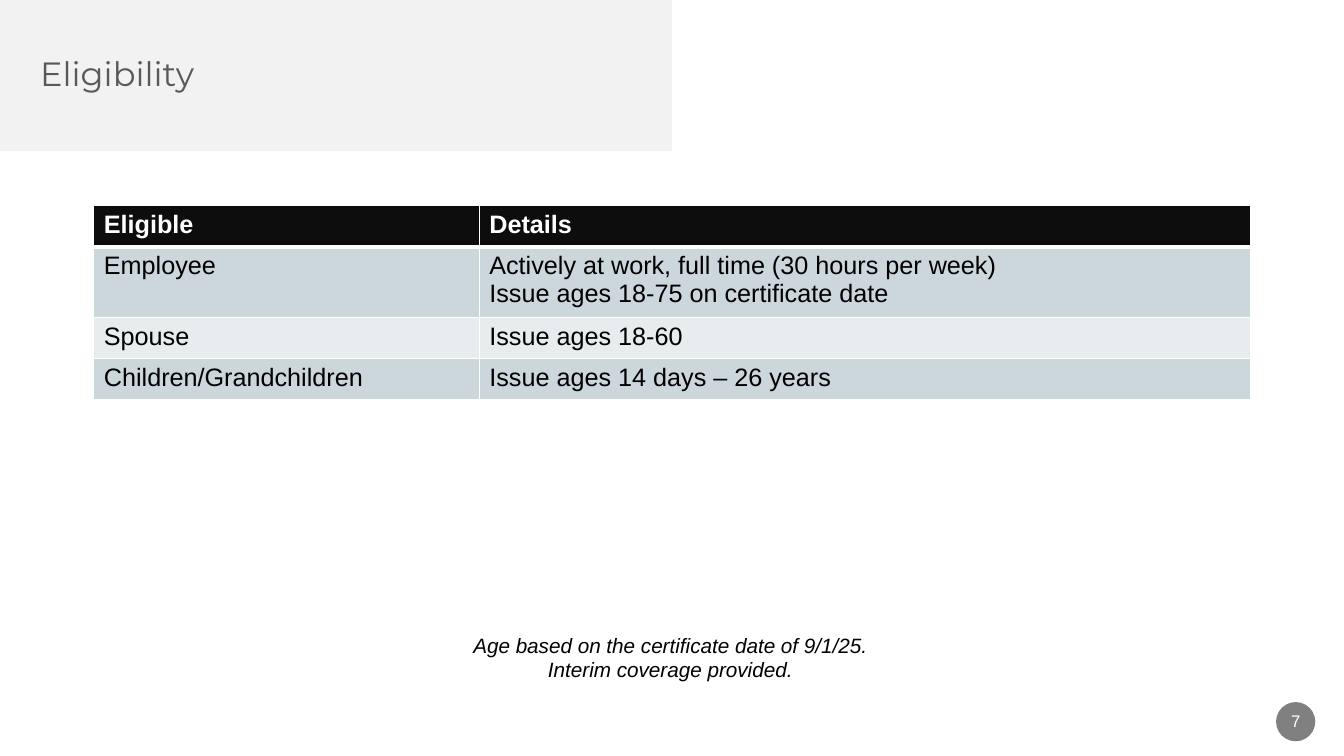
from lxml.etree import SubElement
from pptx import Presentation
from pptx.dml.color import RGBColor
from pptx.enum.shapes import MSO_SHAPE as Preset
from pptx.enum.text import MSO_ANCHOR as Anchor, PP_ALIGN as Align
from pptx.oxml.ns import qn
from pptx.util import Pt

COLORS = {
    "white": "FFFFFF", "black": "000000", "band": "F2F2F2", "title": "595959",
    "badge": "808080", "header": "0D0D0D", "odd": "CCD7DC", "even": "E7ECEE",
}
ELIGIBILITY = [
    ("Eligible", "Details"),
    ("Employee", "Actively at work, full time (30 hours per week)\n"
                 "Issue ages 18-75 on certificate date"),
    ("Spouse", "Issue ages 18-60"),
    ("Children/Grandchildren", "Issue ages 14 days – 26 years"),
]
COLUMN_SHARES = (1 / 3, 2 / 3)
ROW_HEIGHTS = (29.3, 48, 29.3, 29.3)


def color(name):
    return RGBColor.from_string(COLORS[name])


def write(frame, text, size=18, font="Arial", ink="black", bold=False,
          italic=False, align=Align.LEFT, spacing=1.0):
    frame.word_wrap = True
    frame.text = text
    for paragraph in frame.paragraphs:
        paragraph.alignment = align
        paragraph.line_spacing = spacing
        paragraph.font.size = Pt(size)
        paragraph.font.name = font
        paragraph.font.bold = bold
        paragraph.font.italic = italic
        paragraph.font.color.rgb = color(ink)


def add_text(slide, box, text, **style):
    frame = slide.shapes.add_textbox(*map(Pt, box)).text_frame
    frame.vertical_anchor = Anchor.MIDDLE
    write(frame, text, **style)


def add_block(slide, preset, box, fill):
    shape = slide.shapes.add_shape(preset, *map(Pt, box))
    shape.shadow.inherit = False
    shape.fill.solid()
    shape.fill.fore_color.rgb = color(fill)
    shape.line.fill.background()
    return shape


def add_title_band(slide, box, title):
    left, top, width, height = box
    add_block(slide, Preset.RECTANGLE, box, "band")
    add_text(slide, (left + 21.6, top + 7.2, width - 48, height - 14.4), title,
             size=24, font="Montserrat", ink="title", spacing=0.9)


def add_borders(cell, widths):
    """Draw white cell edges; widths maps L, R, T and B to points."""
    properties = cell._tc.get_or_add_tcPr()
    for side, width in widths.items():
        line = SubElement(properties, qn(f"a:ln{side}"), w=str(Pt(width)))
        fill = SubElement(line, qn("a:solidFill"))
        SubElement(fill, qn("a:srgbClr"), val=COLORS["white"])


def add_eligibility_table(slide, box):
    frame = slide.shapes.add_table(len(ELIGIBILITY), len(COLUMN_SHARES), *map(Pt, box))
    table = frame.table
    for column, share in zip(table.columns, COLUMN_SHARES):
        column.width = Pt(box[2] * share)
    for index, (row, height, texts) in enumerate(zip(table.rows, ROW_HEIGHTS, ELIGIBILITY)):
        row.height = Pt(height)
        header = index == 0
        fill = "header" if header else "odd" if index % 2 else "even"
        edges = {"L": 1, "R": 1, "T": 3 if index == 1 else 1, "B": 3 if header else 1}
        for cell, text in zip(row.cells, texts):
            add_borders(cell, edges)
            cell.fill.solid()
            cell.fill.fore_color.rgb = color(fill)
            write(cell.text_frame, text, bold=header, ink="white" if header else "black")


def add_page_badge(slide, box, number):
    left, top, width, height = box
    add_block(slide, Preset.OVAL, box, "badge")
    add_text(slide, (left - 6.4, top - 0.9, width + 12.8, height), number,
             size=12, ink="white", align=Align.CENTER)


def main():
    presentation = Presentation()
    presentation.slide_width, presentation.slide_height = Pt(960), Pt(540)
    slide = presentation.slides.add_slide(presentation.slide_layouts[6])
    add_title_band(slide, (0, 0, 480, 108), "Eligibility")
    add_eligibility_table(slide, (67, 147, 826, sum(ROW_HEIGHTS)))
    add_text(slide, (21.6, 447, 914.4, 45),
             "Age based on the certificate date of 9/1/25.\vInterim coverage provided.",
             size=14.8, italic=True, align=Align.CENTER)
    add_page_badge(slide, (911.5, 501.5, 28, 28), "7")
    presentation.save("out.pptx")


if __name__ == "__main__":
    main()
